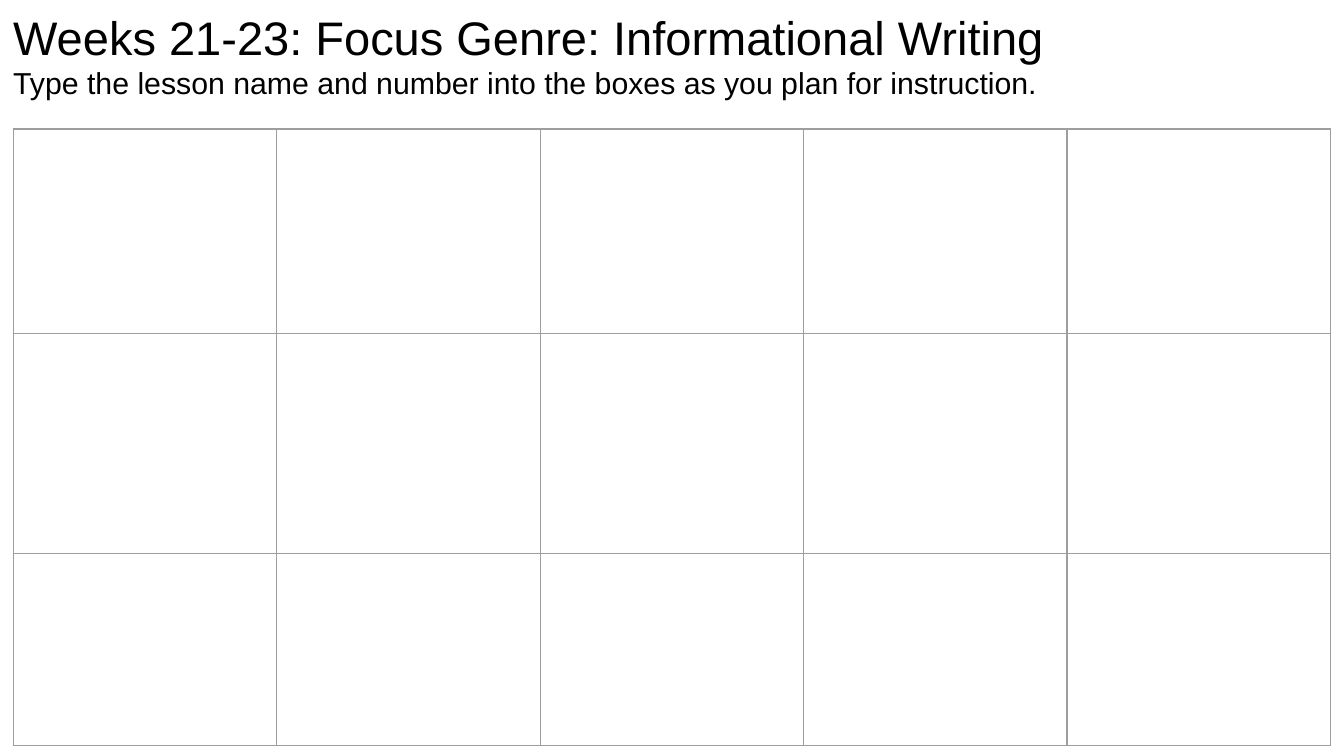
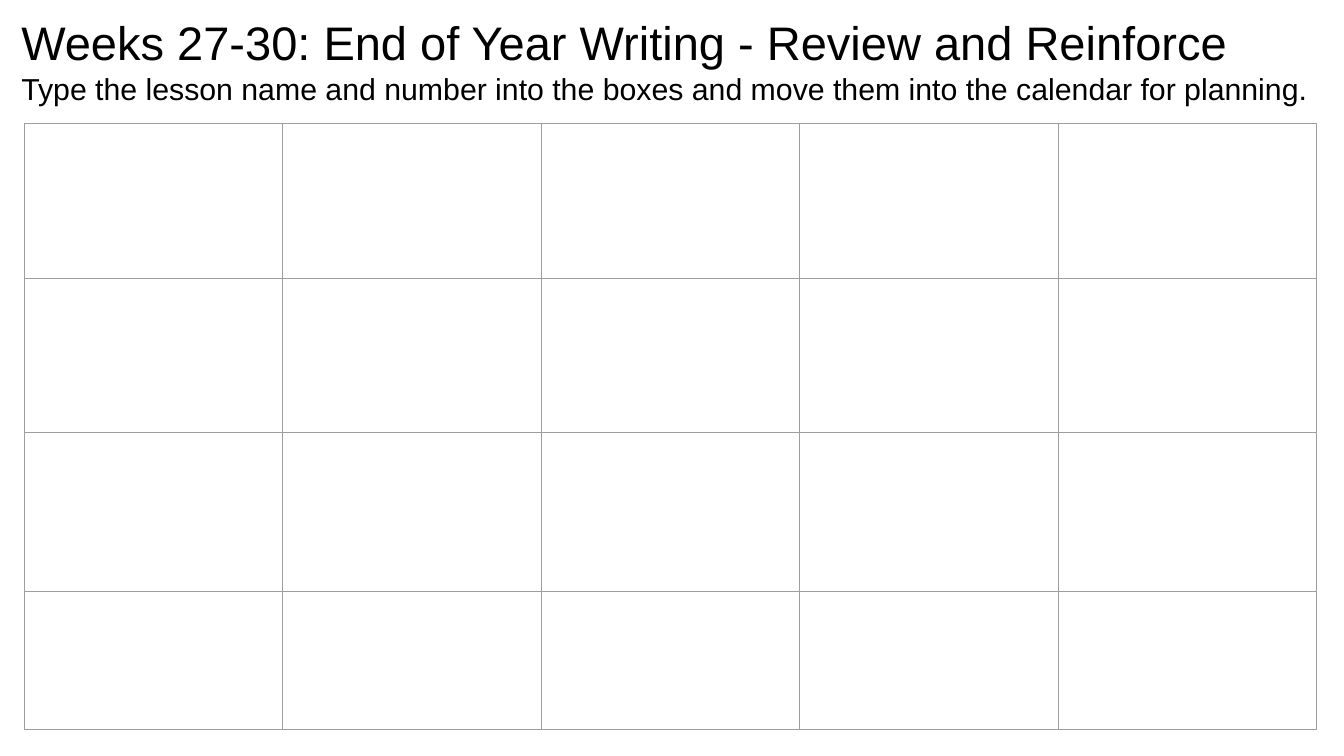
import lxml.etree
import pptx
import pptx.dml.color
import pptx.enum.text
import pptx.oxml.ns
import pptx.util

Inches = pptx.util.Inches
Pt = pptx.util.Pt
qn = pptx.oxml.ns.qn

COLOURS = {"background": "FFFFFF", "text": "000000", "grid": "9E9E9E"}
FONT = "Arial"
HEADING_SIZES = (25.2, 16.2)
WEEKDAYS = 5
SLIDE_WIDTH = 10

PLANS = [
    {
        "heading": (
            "Weeks 21-23: Focus Genre: Informational Writing",
            "Type the lesson name and number into the boxes as you plan for instruction.",
        ),
        "heading_box": (0, -0.04, 9.9, 0.63),
        "calendar_box": (0.1, 0.96, 9.8),
        "week_heights": (1.52, 1.64, 1.43),
    },
    {
        "heading": (
            "Weeks 27-30: End of Year Writing - Review and Reinforce",
            "Type the lesson name and number into the boxes and move them into the calendar for planning.",
        ),
        "heading_box": (0.06, 0, 9.89, 0.63),
        "calendar_box": (0.18, 0.92, 9.62),
        "week_heights": (1.15, 1.15, 1.18, 1.03),
    },
]


def colour(name):
    """Return the named colour as an RGB value."""
    return pptx.dml.color.RGBColor.from_string(COLOURS[name])


def outline_cell(cell, width=0.75):
    """Draw a thin grid line on all four sides of a cell."""
    properties = cell._tc.get_or_add_tcPr()
    for side in ("lnL", "lnR", "lnT", "lnB"):
        line = lxml.etree.SubElement(properties, qn(f"a:{side}"), w=str(Pt(width)))
        fill = lxml.etree.SubElement(line, qn("a:solidFill"))
        lxml.etree.SubElement(fill, qn("a:srgbClr"), val=COLOURS["grid"])


def add_calendar(slide, box, week_heights):
    """Add an empty planning calendar with one row per week."""
    left, top, width = box
    calendar = slide.shapes.add_table(
        len(week_heights), WEEKDAYS,
        Inches(left), Inches(top), Inches(width), Inches(sum(week_heights)),
    ).table
    calendar.first_row = False
    calendar.horz_banding = False
    for day in calendar.columns:
        day.width = Inches(width / WEEKDAYS)
    for week, height in zip(calendar.rows, week_heights):
        week.height = Inches(height)
    for cell in calendar.iter_cells():
        outline_cell(cell)
        cell.fill.background()


def add_heading(slide, box, lines):
    """Add the title with its instruction line below."""
    frame = slide.shapes.add_textbox(*map(Inches, box)).text_frame
    frame.word_wrap = True
    frame.vertical_anchor = pptx.enum.text.MSO_ANCHOR.TOP
    frame.margin_left = frame.margin_right = Inches(0.1)
    frame.margin_top = frame.margin_bottom = Inches(0.1)
    frame.text = "\n".join(lines)
    for paragraph, size in zip(frame.paragraphs, HEADING_SIZES):
        font = paragraph.runs[0].font
        font.name = FONT
        font.size = Pt(size)
        font.color.rgb = colour("text")


def add_plan(deck, plan):
    """Add one planning slide with its calendar and heading."""
    slide = deck.slides.add_slide(deck.slide_layouts[6])
    slide.background.fill.solid()
    slide.background.fill.fore_color.rgb = colour("background")
    add_calendar(slide, plan["calendar_box"], plan["week_heights"])
    add_heading(slide, plan["heading_box"], plan["heading"])


def main():
    """Build and save the deck."""
    deck = pptx.Presentation()
    deck.slide_width = Inches(SLIDE_WIDTH)
    deck.slide_height = Inches(SLIDE_WIDTH * 9 / 16)
    for plan in PLANS:
        add_plan(deck, plan)
    deck.save("out.pptx")


if __name__ == "__main__":
    main()
